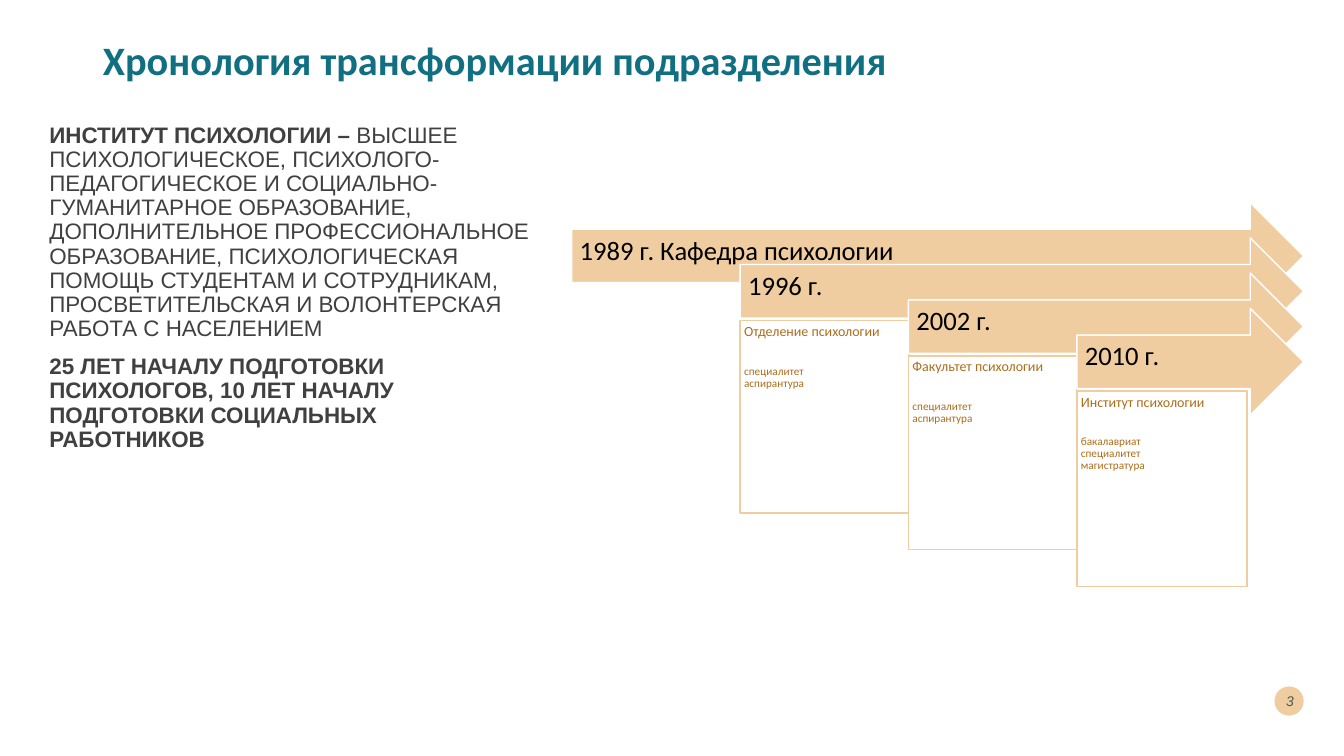
from dataclasses import dataclass

from lxml import etree
from pptx import Presentation
from pptx import util as u
from pptx.dml.color import RGBColor
from pptx.enum import shapes, text
from pptx.oxml.ns import qn

COLORS = {
    "title": "107082",
    "body": "404040",
    "sand": "F0CDA1",
    "detail": "AD6D1C",
    "year": "000000",
    "number": "485A50",
    "white": "FFFFFF",
}
ARROW_RIGHT, ARROW_HEIGHT = 12.93, 1.06
FIRST_LEFT, FIRST_TOP = 5.67, 2.01
STEP_X, STEP_Y = 1.67, 0.35
CARD_DROP = 0.82


@dataclass
class Stage:
    year: str
    unit: str = ""
    programs: tuple[str, ...] = ()
    card_width: float = 1.67
    card_height: float = 1.91


STAGES = [
    Stage("1989 г. Кафедра психологии"),
    Stage("1996 г.", "Отделение психологии", ("специалитет", "аспирантура")),
    Stage("2002 г.", "Факультет психологии", ("специалитет", "аспирантура"),
          card_height=1.92),
    Stage("2010 г.", "Институт психологии",
          ("бакалавриат", "специалитет", "магистратура"), 1.69, 1.94),
]


def rgb(name: str) -> RGBColor:
    return RGBColor.from_string(COLORS[name])


def write(paragraph, words: str, *, size: float, color: str, font="Calibri",
          bold=False, italic=False, align=text.PP_ALIGN.LEFT,
          spacing=0.9, before=0.0, after=0.0):
    """Append a formatted run and set the paragraph's layout."""
    run = paragraph.add_run()
    run.text = words
    run.font.size, run.font.name = u.Pt(size), font
    run.font.bold, run.font.italic = bold, italic
    run.font.color.rgb = rgb(color)
    paragraph.alignment = align
    paragraph.line_spacing = spacing
    paragraph.space_before, paragraph.space_after = u.Pt(before), u.Pt(after)
    return run


def set_frame(frame, anchor, insets=(0.1, 0.05, 0.1, 0.05)) -> None:
    frame.word_wrap = True
    frame.auto_size = text.MSO_AUTO_SIZE.NONE
    frame.vertical_anchor = anchor
    (frame.margin_left, frame.margin_top,
     frame.margin_right, frame.margin_bottom) = map(u.Inches, insets)


def place(item, left: float, top: float, width: float, height: float) -> None:
    item.left, item.top = u.Inches(left), u.Inches(top)
    item.width, item.height = u.Inches(width), u.Inches(height)


def add_figure(slide, kind, box, fill: str, line: str | None = None):
    figure = slide.shapes.add_shape(kind, *map(u.Inches, box))
    figure.shadow.inherit = False
    figure.fill.solid()
    figure.fill.fore_color.rgb = rgb(fill)
    if line:
        figure.line.color.rgb = rgb(line)
        figure.line.width = u.Pt(1)
    else:
        figure.line.fill.background()
    return figure


def add_label(slide, box, insets=(0.1, 0.05, 0.1, 0.05)):
    frame = slide.shapes.add_textbox(*map(u.Inches, box)).text_frame
    set_frame(frame, text.MSO_ANCHOR.MIDDLE, insets)
    return frame.paragraphs[0]


def add_heading(slide) -> None:
    heading = slide.shapes.title
    place(heading, 0.92, 0.5, 10.41, 0.87)
    set_frame(heading.text_frame, text.MSO_ANCHOR.BOTTOM, (0.1, 0, 0.1, 0.53))
    write(heading.text_frame.paragraphs[0], "Хронология трансформации подразделения",
          size=28.8, color="title", bold=True)


def add_description(slide) -> None:
    description = slide.placeholders[1]
    place(description, 0.39, 1.18, 5, 5.23)
    frame = description.text_frame
    set_frame(frame, text.MSO_ANCHOR.TOP)
    style = dict(size=16, color="body", font="Arial", before=10)
    about, jubilee = frame.paragraphs[0], frame.add_paragraph()
    write(about, "ИНСТИТУТ ПСИХОЛОГИИ – ", bold=True, **style)
    write(about, "ВЫСШЕЕ ПСИХОЛОГИЧЕСКОЕ, ПСИХОЛОГО-ПЕДАГОГИЧЕСКОЕ И "
          "СОЦИАЛЬНО-ГУМАНИТАРНОЕ ОБРАЗОВАНИЕ, ДОПОЛНИТЕЛЬНОЕ ПРОФЕССИОНАЛЬНОЕ "
          "ОБРАЗОВАНИЕ, ПСИХОЛОГИЧЕСКАЯ ПОМОЩЬ СТУДЕНТАМ И СОТРУДНИКАМ, "
          "ПРОСВЕТИТЕЛЬСКАЯ И ВОЛОНТЕРСКАЯ РАБОТА С НАСЕЛЕНИЕМ", **style)
    write(jubilee, "25 ЛЕТ НАЧАЛУ ПОДГОТОВКИ ПСИХОЛОГОВ, 10 ЛЕТ НАЧАЛУ "
          "ПОДГОТОВКИ СОЦИАЛЬНЫХ РАБОТНИКОВ", bold=True, **style)
    for paragraph in frame.paragraphs:
        layout = paragraph._p.get_or_add_pPr()
        layout.set("marL", "0")
        layout.set("indent", "0")
        etree.SubElement(layout, qn("a:buNone"))


def add_stage(slide, index: int, stage: Stage) -> None:
    left, top = FIRST_LEFT + index * STEP_X, FIRST_TOP + index * STEP_Y
    width = ARROW_RIGHT - left

    # Arrow with its year
    add_figure(slide, shapes.MSO_SHAPE.RIGHT_ARROW,
               (left, top, width, ARROW_HEIGHT), "sand", "white")
    year = add_label(slide, (left, top + ARROW_HEIGHT / 4,
                             width - ARROW_HEIGHT / 4, ARROW_HEIGHT / 2),
                     (0.08, 0.08, 0.28, 0.17))
    write(year, stage.year, size=19, color="year")

    # Card with the unit and its programs
    if not stage.unit:
        return
    card = add_figure(slide, shapes.MSO_SHAPE.RECTANGLE,
                      (left, top + CARD_DROP, stage.card_width, stage.card_height),
                      "white", "sand").text_frame
    set_frame(card, text.MSO_ANCHOR.TOP, (0.04,) * 4)
    write(card.paragraphs[0], stage.unit, size=10, color="detail", after=18.5)
    for program in stage.programs:
        write(card.add_paragraph(), program, size=8, color="detail")


def add_page_number(slide) -> None:
    add_figure(slide, shapes.MSO_SHAPE.OVAL, (12.64, 6.81, 0.29, 0.29), "sand")
    paragraph = add_label(slide, (12.54, 6.75, 0.39, 0.4))
    run = write(paragraph, "3", size=10, color="number", font="Arial",
                italic=True, align=text.PP_ALIGN.RIGHT, spacing=1.0)
    # Turn the run into a slide number field
    field = etree.Element(qn("a:fld"), type="slidenum",
                          id="{B6F15528-21DE-4FAA-801E-634DDDAF4B2B}")
    run._r.addprevious(field)
    field.extend(list(run._r))
    paragraph._p.remove(run._r)


def main() -> None:
    deck = Presentation()
    deck.slide_width, deck.slide_height = u.Inches(13.33), u.Inches(7.5)
    # The field shows the slide's own number, so counting starts at 3
    deck.element.set("firstSlideNum", "3")
    slide = deck.slides.add_slide(deck.slide_layouts[1])
    add_heading(slide)
    add_description(slide)
    for index, stage in enumerate(STAGES):
        add_stage(slide, index, stage)
    add_page_number(slide)
    deck.save("out.pptx")


if __name__ == "__main__":
    main()
